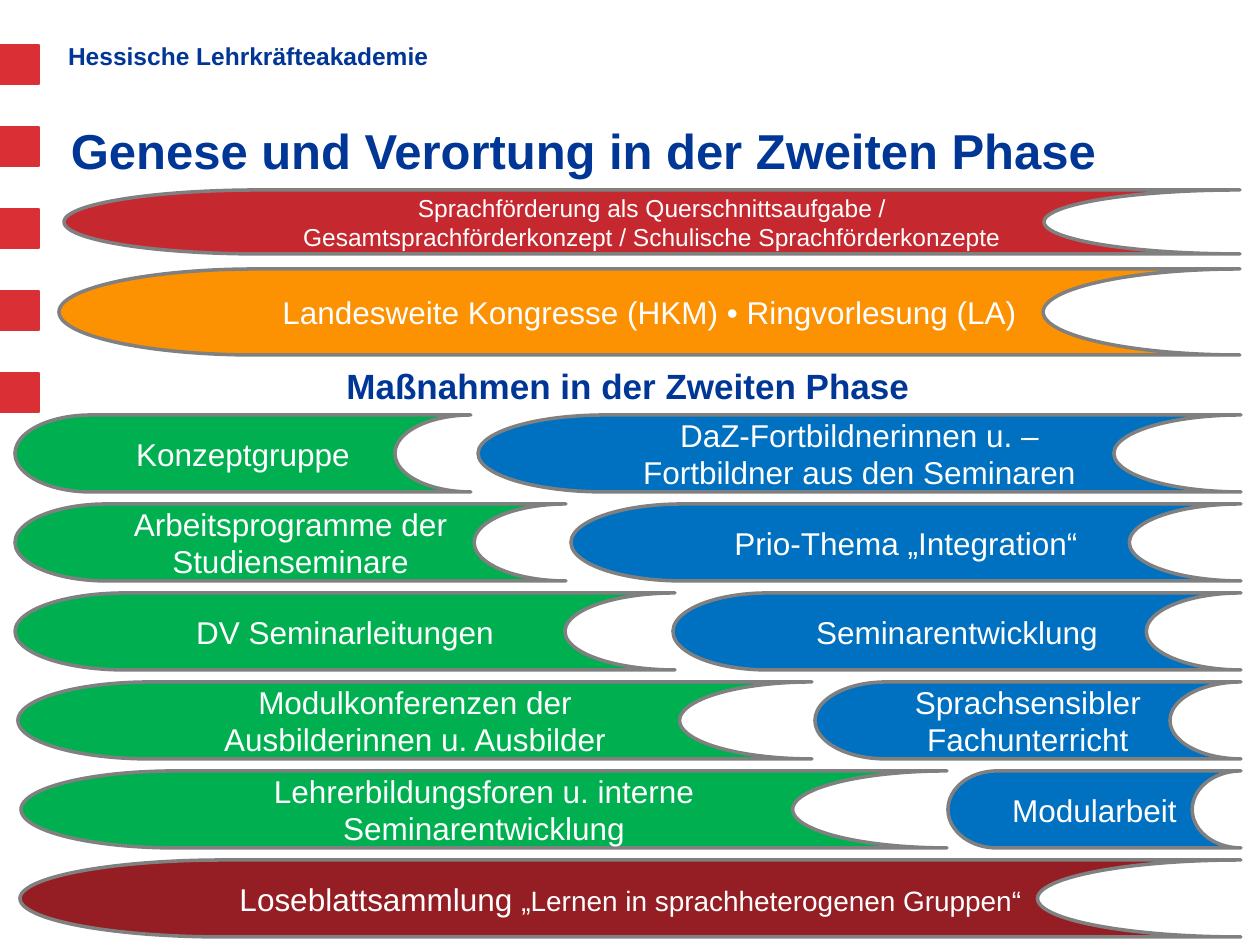
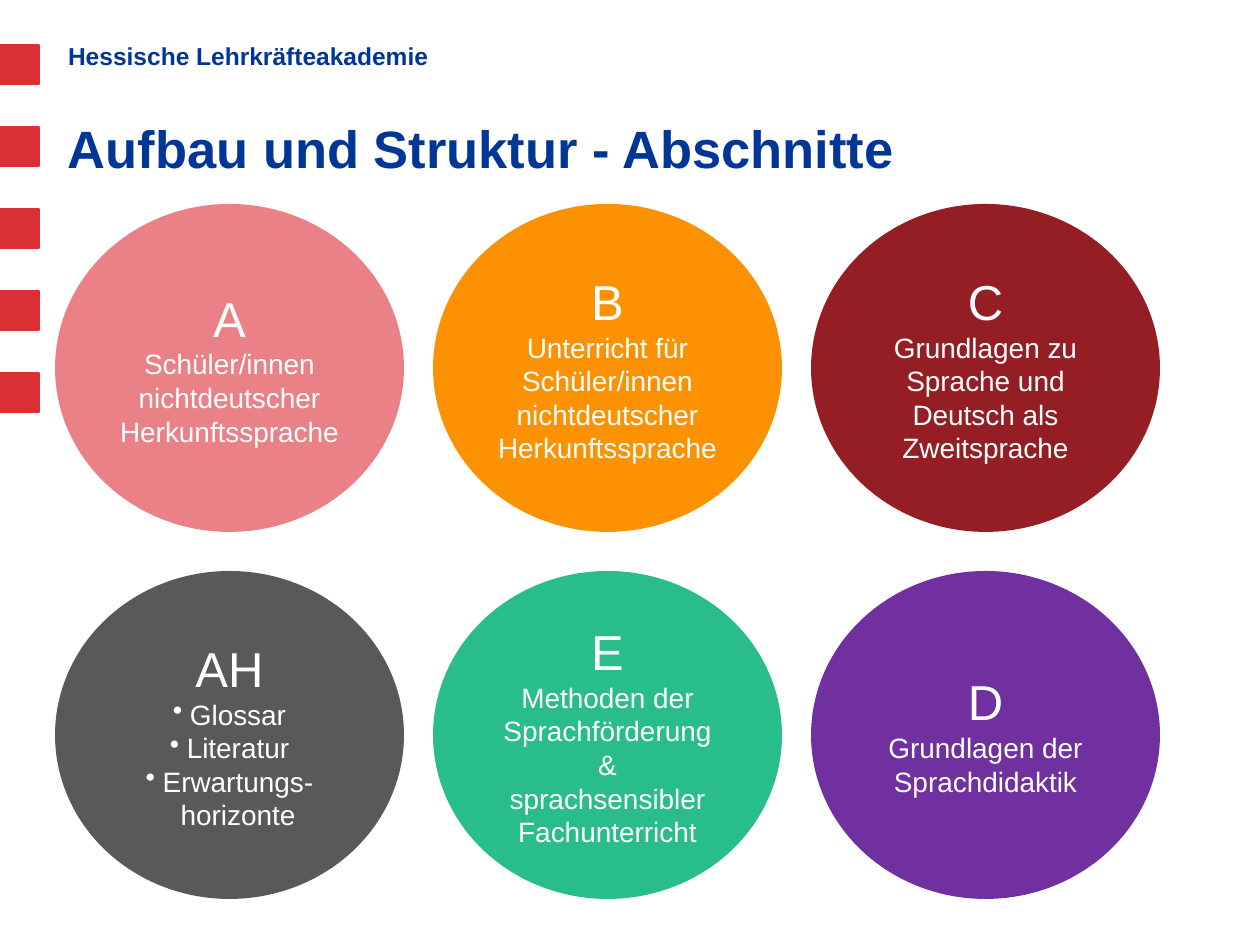
import pptx
import pptx.util
import pptx.dml.color
import pptx.enum.shapes
import pptx.enum.text
import pptx.oxml.ns
from lxml import etree
from dataclasses import dataclass

SCALE = pptx.util.Inches(1) / 126
SHAPES = pptx.enum.shapes.MSO_SHAPE
ALIGN = pptx.enum.text.PP_ALIGN
ANCHOR = pptx.enum.text.MSO_ANCHOR


@dataclass(frozen=True)
class Theme:
    font: str = "Arial"
    navy: str = "003695"
    white: str = "FFFFFF"
    signal: str = "DB2F36"
    red: str = "C62830"
    rose: str = "E98186"
    orange: str = "FC9102"
    wine: str = "941E24"
    green: str = "00B050"
    blue: str = "0070C0"
    teal: str = "29BD8C"
    purple: str = "7030A0"
    slate: str = "595959"
    outline: str = "808080"
    small: int = 14
    body: int = 16
    band: int = 18
    heading: int = 20
    title: int = 28
    large_title: int = 30


THEME = Theme()


def px(length):
    return pptx.util.Emu(round(length * SCALE))


def rgb(colour):
    return pptx.dml.color.RGBColor.from_string(colour)


def style(font, size, colour, bold=False):
    font.name = THEME.font
    font.size = pptx.util.Pt(size)
    font.color.rgb = rgb(colour)
    font.bold = bold


# Shared building blocks
def add_text(page, box, text, size, align=ALIGN.LEFT, side=12, edge=0, anchor=ANCHOR.BOTTOM):
    frame = page.shapes.add_textbox(*map(px, box)).text_frame
    frame.word_wrap = True
    frame.vertical_anchor = anchor
    frame.margin_left = frame.margin_right = px(side)
    frame.margin_top = frame.margin_bottom = px(edge)
    frame.text = text
    para = frame.paragraphs[0]
    para.alignment = align
    style(para.runs[0].font, size, THEME.navy, bold=True)
    return para


def add_figure(page, kind, box, fill, line=None, width=0.75):
    figure = page.shapes.add_shape(kind, *map(px, box))
    figure.shadow.inherit = False
    figure.fill.solid()
    figure.fill.fore_color.rgb = rgb(fill)
    if line:
        figure.line.color.rgb = rgb(line)
        figure.line.width = pptx.util.Pt(width)
    else:
        figure.line.fill.background()
    figure.text_frame.word_wrap = True
    figure.text_frame.vertical_anchor = ANCHOR.MIDDLE
    return figure


def add_bullet(para, indent):
    properties = para._p.get_or_add_pPr()
    properties.set("marL", str(px(indent)))
    properties.set("indent", str(-px(indent)))
    bullet = etree.SubElement(properties, pptx.oxml.ns.qn("a:buChar"))
    bullet.set("char", "•")


def add_page(deck, title, size, left):
    page = deck.slides.add_slide(deck.slide_layouts[6])
    for row in range(5):
        add_figure(page, SHAPES.RECTANGLE, (0, 45 + 82 * row, 39, 39), THEME.signal, THEME.signal)
    header = add_text(page, (68, 38, 1012, 39), "Hessische Lehrkräfteakademie",
                      THEME.small, side=0, edge=6, anchor=ANCHOR.TOP)
    header.line_spacing = 0.9
    add_text(page, (left, 43, 1162, 136), title, size)
    return page


# Tapered bands of the overview
def add_band(page, box, fill, text, size=THEME.band):
    band = add_figure(page, SHAPES.FLOWCHART_STORED_DATA, box, fill, THEME.outline, 2)
    band.text_frame.text = text
    para = band.text_frame.paragraphs[0]
    para.alignment = ALIGN.CENTER
    style(para.runs[0].font, size, THEME.white)
    return para


def add_measures(page, box):
    left, top, width, _ = box
    right, pitch, height = left + width, 89, 77
    rows = [  # green offset, green width, green text, blue offset, blue text
        (0, 456, "Konzeptgruppe", 463, "DaZ-Fortbildnerinnen u. –Fortbildner aus den Seminaren"),
        (0, 551, "Arbeitsprogramme der Studienseminare", 556, "Prio-Thema „Integration“"),
        (0, 660, "DV Seminarleitungen", 658, "Seminarentwicklung"),
        (3, 794, "Modulkonferenzen der Ausbilderinnen u. Ausbilder", 800,
         "Sprachsensibler Fachunterricht"),
        (6, 926, "Lehrerbildungsforen u. interne Seminarentwicklung", 933, "Modularbeit"),
    ]
    for row, (offset, green_width, green_text, split, blue_text) in enumerate(rows):
        row_top = top + pitch * row
        add_band(page, (left + offset, row_top, green_width, height), THEME.green, green_text)
        add_band(page, (left + split, row_top, right - left - split, height),
                 THEME.blue, blue_text)
    # Closing band across the full width
    closing = add_band(page, (left + 5, top + pitch * len(rows), width - 5, height),
                       THEME.wine, "Loseblattsammlung ")
    span = closing.add_run()
    span.text = "„Lernen in sprachheterogenen Gruppen“"
    style(span.font, THEME.body, THEME.white)


def build_overview(deck):
    page = add_page(deck, "Genese und Verortung in der Zweiten Phase", THEME.title, 59)
    add_band(page, (64, 190, 1176, 64), THEME.red,
             "Sprachförderung als Querschnittsaufgabe / Gesamtsprachförderkonzept / "
             "Schulische Sprachförderkonzepte", THEME.small)
    add_band(page, (59, 269, 1181, 86), THEME.orange,
             "Landesweite Kongresse (HKM) • Ringvorlesung (LA)")
    add_text(page, (15, 354, 1226, 53), "Maßnahmen in der Zweiten Phase",
             THEME.heading, ALIGN.CENTER)
    add_measures(page, (15, 415, 1226, 522))


# Circles of the section map
def add_section(page, box, fill, letter, lines, bulleted):
    circle = add_figure(page, SHAPES.OVAL, box, fill)
    frame = circle.text_frame
    frame.text = "\n".join([letter, *lines])
    for index, para in enumerate(frame.paragraphs):
        para.alignment = ALIGN.CENTER
        if bulleted and index:
            add_bullet(para, 17)
        style(para.runs[0].font, THEME.body if index else THEME.title, THEME.white)


def add_sections(page, box):
    left, top, width, height = box
    circle_width, circle_height = 349, 328
    column_pitch = (width - circle_width) // 2
    row_pitch = height - circle_height
    sections = [
        (THEME.rose, "A", ["Schüler/innen nichtdeutscher Herkunftssprache"]),
        (THEME.orange, "B", ["Unterricht für Schüler/innen nichtdeutscher Herkunftssprache"]),
        (THEME.wine, "C", ["Grundlagen zu Sprache und Deutsch als Zweitsprache"]),
        (THEME.slate, "AH", ["Glossar", "Literatur", "Erwartungs-horizonte"]),
        (THEME.teal, "E", ["Methoden der Sprachförderung & sprachsensibler Fachunterricht"]),
        (THEME.purple, "D", ["Grundlagen der Sprachdidaktik"]),
    ]
    for index, (fill, letter, lines) in enumerate(sections):
        row, column = divmod(index, 3)
        place = (left + column * column_pitch, top + row * row_pitch,
                 circle_width, circle_height)
        add_section(page, place, fill, letter, lines, bulleted=len(lines) > 1)


def build_section_map(deck):
    page = add_page(deck, "Aufbau und Struktur - Abschnitte", THEME.large_title, 56)
    add_sections(page, (55, 204, 1105, 695))


def main():
    deck = pptx.Presentation()
    deck.slide_width, deck.slide_height = px(1260), px(945)
    build_overview(deck)
    build_section_map(deck)
    deck.save("out.pptx")


if __name__ == "__main__":
    main()
